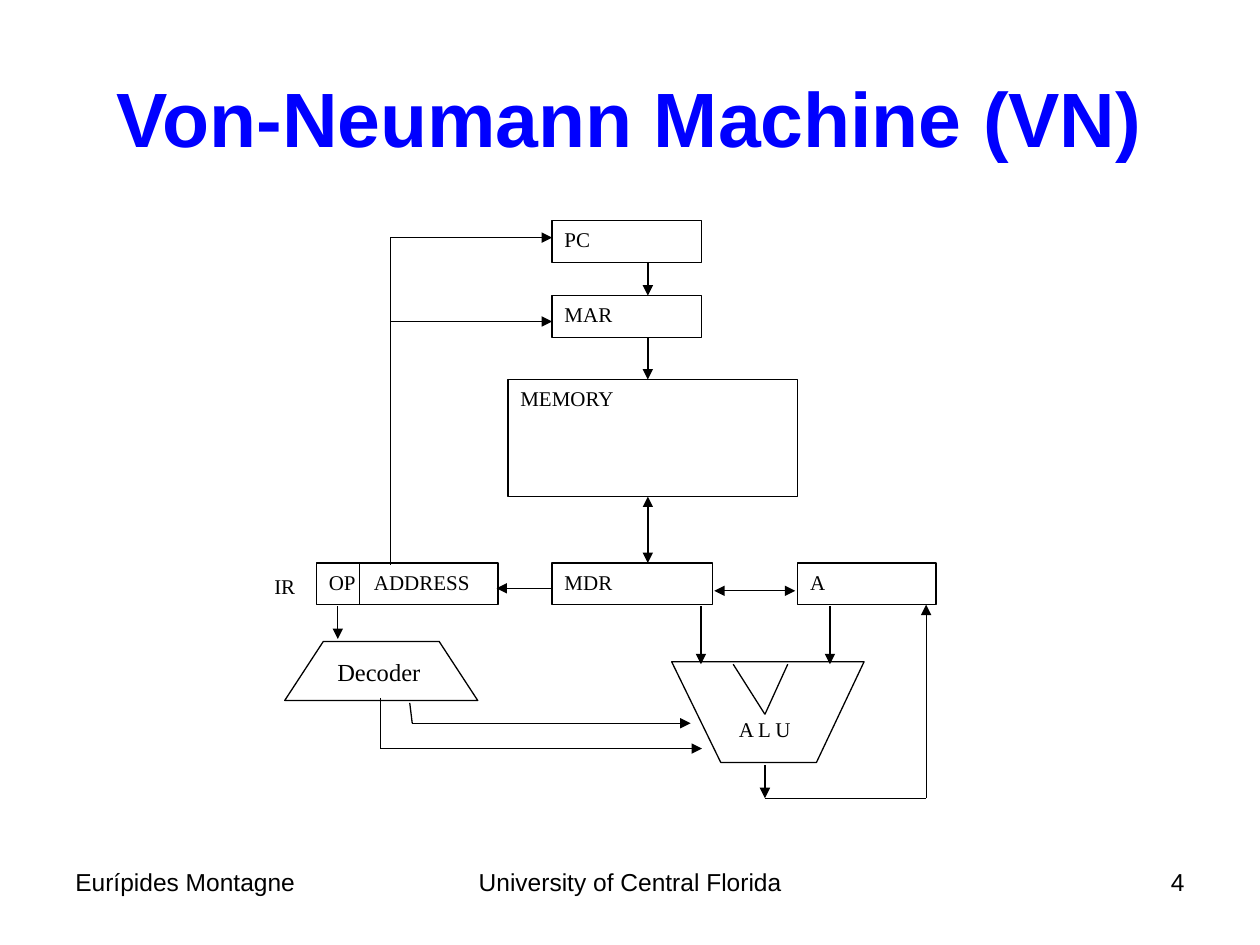
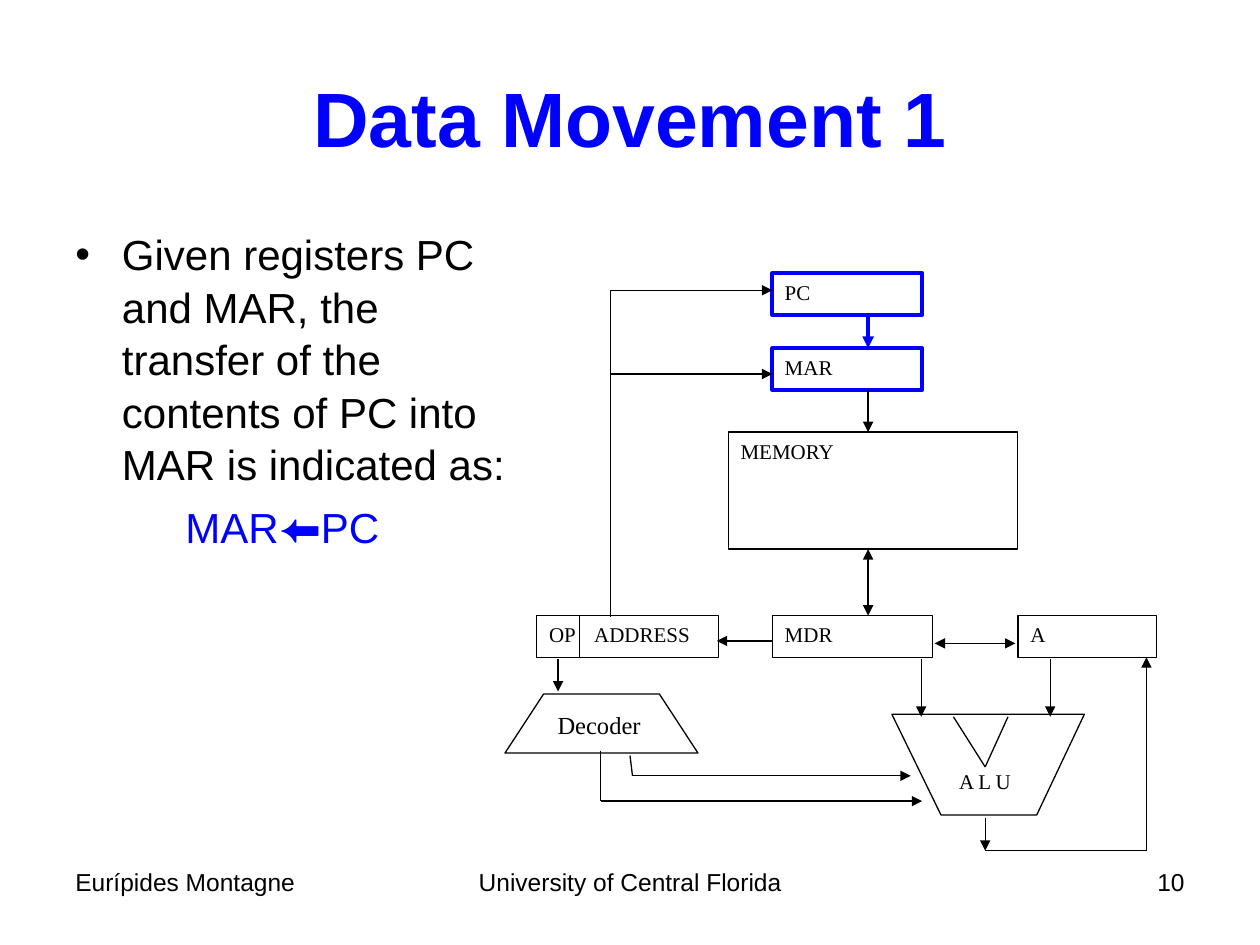
from dataclasses import dataclass

from lxml.etree import SubElement
from pptx import Presentation
from pptx.dml.color import RGBColor
from pptx.enum.shapes import MSO_CONNECTOR, MSO_SHAPE
from pptx.enum.text import MSO_ANCHOR, PP_ALIGN
from pptx.oxml.ns import qn
from pptx.util import Cm, Pt

BLACK = RGBColor(0x00, 0x00, 0x00)
WHITE = RGBColor(0xFF, 0xFF, 0xFF)
BLUE = RGBColor(0x00, 0x00, 0xFF)
SANS = "Arial"
SERIF = "Times New Roman"
THIN = 0.75
THICK = 2.25
ADDRESS_TAB = 0.91


@dataclass(frozen=True)
class Area:
    left: float
    top: float
    width: float
    height: float

    def moved(self, right: float, down: float) -> "Area":
        return Area(self.left + right, self.top + down, self.width, self.height)

    def lengths(self) -> tuple:
        return Cm(self.left), Cm(self.top), Cm(self.width), Cm(self.height)


@dataclass(frozen=True)
class Style:
    size: float
    font: str = SANS
    color: RGBColor = BLACK
    bold: bool = False
    align: PP_ALIGN = PP_ALIGN.LEFT


@dataclass(frozen=True)
class Register:
    label: str
    area: Area


@dataclass(frozen=True)
class Wire:
    start: tuple[float, float]
    end: tuple[float, float]
    ends: str = "tail"
    name: str = ""


@dataclass(frozen=True)
class Machine:
    right: float = 0
    down: float = 0
    highlights: tuple[str, ...] = ()


TITLE = Style(44, color=BLUE, bold=True, align=PP_ALIGN.CENTER)
BODY = Style(24)
FORMULA = Style(24, color=BLUE)
LABEL = Style(12, SERIF)
DECODER_LABEL = Style(14, SERIF)
ALU_LABEL = Style(12, SERIF, align=PP_ALIGN.CENTER)

REGISTERS = (
    Register("PC", Area(11.13, 4.45, 3.02, 0.84)),
    Register("MAR", Area(11.13, 5.96, 3.02, 0.84)),
    Register("MEMORY", Area(10.24, 7.65, 5.84, 2.36)),
    Register("OP\tADDRESS", Area(6.38, 11.35, 3.66, 0.84)),
    Register("MDR", Area(11.13, 11.35, 3.23, 0.84)),
    Register("A", Area(16.08, 11.35, 2.79, 0.84)),
)
DECODER = Area(5.74, 12.93, 3.89, 1.19)
DECODER_TEXT = Area(6.55, 13.13, 2.34, 0.86)
IR_TEXT = Area(5.28, 11.43, 1.27, 0.76)
ALU_OUTLINE = ((13.54, 13.34), (14.53, 15.37), (16.46, 15.37), (17.42, 13.34))

WIRES = (
    Wire((13.06, 5.28), (13.06, 5.96), name="PC to MAR"),
    Wire((13.06, 6.81), (13.06, 7.65)),
    Wire((13.06, 10.01), (13.06, 11.35), "both"),
    Wire((14.4, 11.91), (16.03, 11.91), "both"),
    Wire((11.13, 11.86), (10.01, 11.86)),
    Wire((7.87, 11.38), (7.87, 4.78), "none"),
    Wire((7.87, 4.79), (11.13, 4.79)),
    Wire((7.87, 6.48), (11.13, 6.48)),
    Wire((7.24, 11.35), (7.24, 12.2), "none"),
    Wire((6.81, 12.22), (6.81, 12.88)),
    Wire((8.26, 14.17), (8.31, 14.58), "none"),
    Wire((8.31, 14.58), (13.92, 14.58)),
    Wire((7.67, 14.07), (7.67, 15.09), "none"),
    Wire((7.67, 15.09), (14.15, 15.09)),
    Wire((14.13, 12.22), (14.13, 13.39)),
    Wire((16.73, 12.22), (16.73, 13.39)),
    Wire((14.78, 13.39), (15.42, 14.4), "none"),
    Wire((15.88, 13.39), (15.42, 14.4), "none"),
    Wire((15.42, 15.42), (15.42, 16.09)),
    Wire((15.42, 16.09), (18.67, 16.09), "none"),
    Wire((18.67, 16.09), (18.67, 12.19)),
)


def format_paragraph(para, style: Style) -> None:
    para.alignment = style.align
    for span in para.runs:
        span.font.size = Pt(style.size)
        span.font.name = style.font
        span.font.bold = style.bold
        span.font.color.rgb = style.color


def write(shape, text: str, style: Style, anchor=MSO_ANCHOR.TOP) -> None:
    frame = shape.text_frame
    frame.word_wrap = True
    frame.vertical_anchor = anchor
    frame.text = text
    for para in frame.paragraphs:
        format_paragraph(para, style)


def add_text(page, area: Area, text: str, style: Style, anchor=MSO_ANCHOR.TOP):
    box = page.shapes.add_textbox(*area.lengths())
    write(box, text, style, anchor)
    return box


def paint(shape, color: RGBColor = BLACK, width: float = THIN) -> None:
    shape.shadow.inherit = False
    shape.fill.solid()
    shape.fill.fore_color.rgb = WHITE
    shape.line.color.rgb = color
    shape.line.width = Pt(width)


def pen(highlighted: bool) -> tuple[RGBColor, float]:
    return (BLUE, THICK) if highlighted else (BLACK, THIN)


def add_tab_stop(para, position: float) -> None:
    properties = para._p.get_or_add_pPr()
    stops = SubElement(properties, qn("a:tabLst"))
    SubElement(stops, qn("a:tab"), pos=str(Cm(position)), algn="l")


def add_register(page, register: Register, machine: Machine) -> None:
    area = register.area.moved(machine.right, machine.down)
    box = page.shapes.add_shape(MSO_SHAPE.RECTANGLE, *area.lengths())
    paint(box, *pen(register.label in machine.highlights))
    write(box, register.label, LABEL)
    if "\t" in register.label:
        add_tab_stop(box.text_frame.paragraphs[0], ADDRESS_TAB)


def add_wire(page, wire: Wire, machine: Machine) -> None:
    points = [
        length
        for x, y in (wire.start, wire.end)
        for length in (Cm(x + machine.right), Cm(y + machine.down))
    ]
    line = page.shapes.add_connector(MSO_CONNECTOR.STRAIGHT, *points)
    color, width = pen(wire.name in machine.highlights)
    line.line.color.rgb = color
    line.line.width = Pt(width)
    outline = line.get_or_add_ln()
    if wire.ends == "both":
        SubElement(outline, qn("a:headEnd"), type="triangle")
    if wire.ends != "none":
        SubElement(outline, qn("a:tailEnd"), type="triangle")
    SubElement(line.element.spPr, qn("a:effectLst"))


def add_decoder(page, machine: Machine) -> None:
    area = DECODER.moved(machine.right, machine.down)
    decoder = page.shapes.add_shape(
        MSO_SHAPE.FLOWCHART_MANUAL_OPERATION, *area.lengths()
    )
    decoder.rotation = 180
    paint(decoder)
    text_area = DECODER_TEXT.moved(machine.right, machine.down)
    add_text(page, text_area, "Decoder", DECODER_LABEL)


def add_alu(page, machine: Machine) -> None:
    corners = [
        (Cm(x + machine.right), Cm(y + machine.down)) for x, y in ALU_OUTLINE
    ]
    builder = page.shapes.build_freeform(*corners[0])
    builder.add_line_segments(corners[1:], close=True)
    alu = builder.convert_to_shape()
    paint(alu)
    write(alu, "A L U", ALU_LABEL)
    alu.text_frame.margin_top = Cm(1.1)
    alu.text_frame.margin_right = Cm(0.38)


def add_machine(page, machine: Machine) -> None:
    for register in REGISTERS:
        add_register(page, register, machine)
    add_decoder(page, machine)
    add_alu(page, machine)
    for wire in WIRES:
        add_wire(page, wire, machine)


def add_page(deck, title: str, number: int):
    page = deck.slides.add_slide(deck.slide_layouts[6])
    footers = (
        ("Eurípides Montagne", 1.27, 5.92, PP_ALIGN.LEFT),
        ("University of Central Florida", 8.68, 8.05, PP_ALIGN.CENTER),
        (str(number), 18.21, 5.92, PP_ALIGN.RIGHT),
    )
    for text, left, width, align in footers:
        add_text(page, Area(left, 17.35, width, 1.32), text, Style(14, align=align))
    add_text(page, Area(1.27, 0.76, 22.86, 3.18), title, TITLE, MSO_ANCHOR.MIDDLE)
    return page


def set_indent(para, margin: float, hanging: float = 0) -> None:
    properties = para._p.get_or_add_pPr()
    properties.set("marL", str(Cm(margin)))
    properties.set("indent", str(-Cm(hanging)))


def add_explanation(page) -> None:
    text = (
        "Given registers PC and MAR, the transfer of the contents "
        "of PC into MAR is indicated as:"
    )
    box = add_text(page, Area(1.27, 4.45, 9.7, 12.57), text, BODY)
    statement = box.text_frame.paragraphs[0]
    formula = box.text_frame.add_paragraph()
    formula.text = "MAR⬅PC"
    format_paragraph(formula, FORMULA)
    for para in (statement, formula):
        para.space_before = Pt(6)
        para.line_spacing = 1.04
    set_indent(statement, 0.94, 0.94)
    set_indent(formula, 2.22)
    properties = statement._p.get_or_add_pPr()
    SubElement(properties, qn("a:buFont"), typeface=SANS)
    SubElement(properties, qn("a:buChar"), char="•")


def main() -> None:
    deck = Presentation()
    deck.slide_width, deck.slide_height = Cm(25.4), Cm(19.05)

    overview = add_page(deck, "Von-Neumann Machine (VN)", 4)
    add_machine(overview, Machine())
    add_text(overview, IR_TEXT, "IR", LABEL)

    movement = add_page(deck, "Data Movement 1", 10)
    add_explanation(movement)
    add_machine(movement, Machine(4.44, 1.06, ("PC", "MAR", "PC to MAR")))

    deck.save("out.pptx")


if __name__ == "__main__":
    main()
